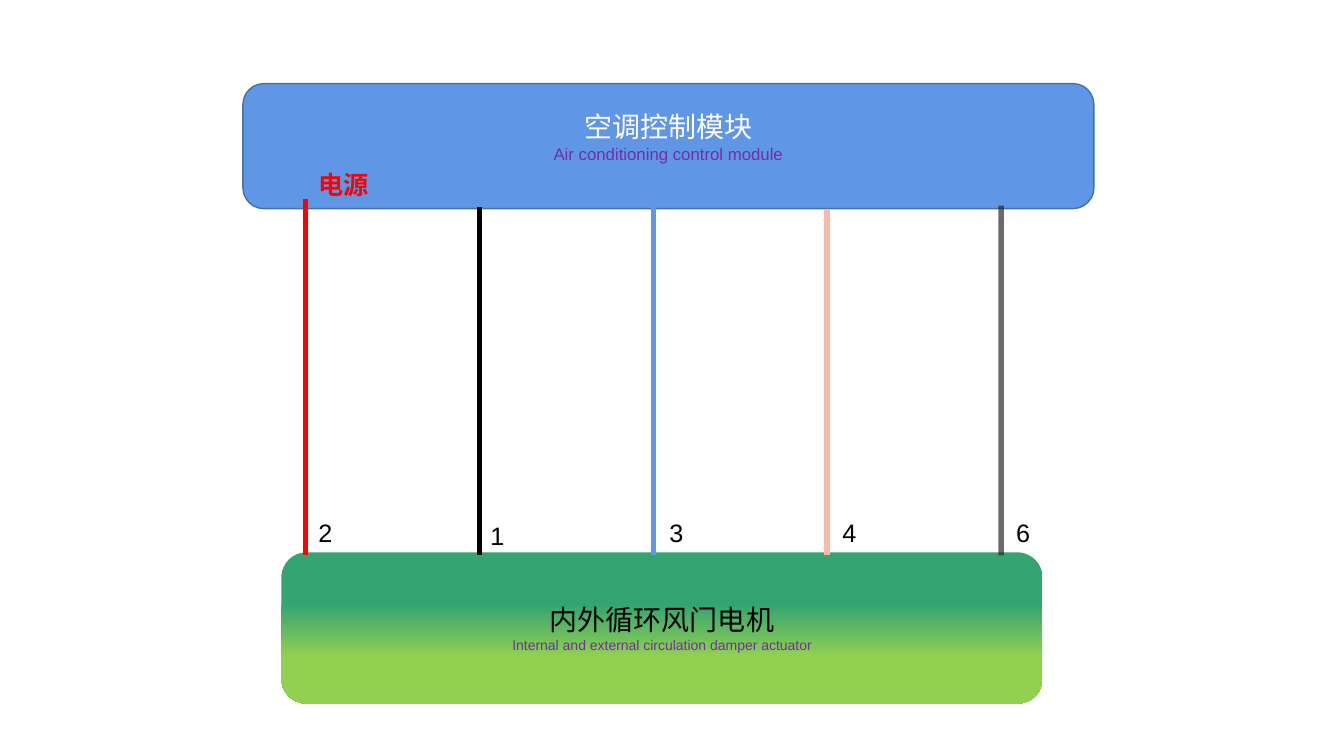
import pptx
import pptx.util
import pptx.dml.color
import pptx.enum.shapes
import pptx.enum.text
import pptx.oxml
import pptx.oxml.ns

Inches, Pt = pptx.util.Inches, pptx.util.Pt
ALIGN = pptx.enum.text.PP_ALIGN
ANCHOR = pptx.enum.text.MSO_ANCHOR

COLORS = {
    "blue": "6096E6", "edge": "476FAA", "white": "FFFFFF", "black": "000000",
    "purple": "7030A0", "green": "34A471", "lime": "92D050",
    "red": "FF0000", "pink": "F7B8A9", "gray": "262626",
}
LEFT, PITCH = 3.03, 1.725  # first wire and the gap between wires
FOOT = 5.51                # lower end of every wire

# pin, color, top of wire, label shift, label top, opacity in percent
WIRES = [
    ("2", "red", 1.97, 0.03, 5.08, 100),
    ("1", "black", 2.05, 0.01, 5.11, 100),
    ("3", "blue", 2.04, 0.06, 5.08, 100),
    ("4", "pink", 2.07, 0.05, 5.08, 100),
    ("6", "gray", 2.04, 0.05, 5.08, 67),
]


def rgb(name):
    return pptx.dml.color.RGBColor.from_string(COLORS[name])


def write(para, text, size=18, color="black", bold=None, align=None):
    para.alignment = align
    run = para.add_run()
    run.text = text
    font = run.font
    font.name, font.size, font.bold = "Arial", Pt(size), bold
    font.color.rgb = rgb(color)


def label(slide, text, left, top, width=0.65, wrap=True, **style):
    box = slide.shapes.add_textbox(*map(Inches, (left, top, width, 0.4)))
    frame = box.text_frame
    frame.word_wrap = wrap
    frame.auto_size = pptx.enum.text.MSO_AUTO_SIZE.SHAPE_TO_FIT_TEXT
    write(frame.paragraphs[0], text, **style)


def block(slide, area, title, note):
    """Add a rounded box with a title and a note, each (text, size, color)."""
    kind = pptx.enum.shapes.MSO_SHAPE.ROUNDED_RECTANGLE
    shape = slide.shapes.add_shape(kind, *map(Inches, area))
    shape.shadow.inherit = False
    frame = shape.text_frame
    frame.word_wrap = True
    frame.vertical_anchor = ANCHOR.MIDDLE
    write(frame.paragraphs[0], *title, align=ALIGN.CENTER)
    write(frame.add_paragraph(), *note, align=ALIGN.CENTER)
    return shape


def blend(shape, stops):
    """Fill from top to bottom with (position, color) stops."""
    shape.fill.gradient()
    shape.fill.gradient_angle = 270
    for stop, (place, color) in zip(shape.fill.gradient_stops, stops):
        stop.position = place
        stop.color.rgb = rgb(color)


def wire(slide, x, top, color, alpha):
    ends = map(Inches, (x, top, x, FOOT))
    link = slide.shapes.add_connector(
        pptx.enum.shapes.MSO_CONNECTOR.STRAIGHT, *ends)
    link.line.width = Pt(4)
    link.line.color.rgb = rgb(color)
    props = link._element.spPr
    if alpha < 100:
        tint = props.find(".//" + pptx.oxml.ns.qn("a:srgbClr"))
        tint.append(pptx.oxml.parse_xml(
            f'<a:alpha {pptx.oxml.ns.nsdecls("a")} val="{alpha * 1000}"/>'))
    props.append(pptx.oxml.parse_xml(
        f'<a:effectLst {pptx.oxml.ns.nsdecls("a")}/>'))


def main():
    deck = pptx.Presentation()
    deck.slide_width, deck.slide_height = Inches(13.33), Inches(7.5)
    slide = deck.slides.add_slide(deck.slide_layouts[6])

    module = block(slide, (2.41, 0.83, 8.44, 1.24),
                   ("空调控制模块", 20, "white"),
                   ("Air conditioning control module", 12, "purple"))
    module.fill.solid()
    module.fill.fore_color.rgb = rgb("blue")
    module.line.color.rgb = rgb("edge")
    module.line.width = Pt(1)
    module.text_frame.margin_bottom = Inches(0.24)

    motor = block(slide, (2.79, 5.48, 7.55, 1.5),
                  ("内外循环风门电机", 20, "black"),
                  ("Internal and external circulation damper actuator",
                   10, "purple"))
    blend(motor, [(0.34, "green"), (0.69, "lime")])
    motor.line.fill.background()

    for col, (pin, color, top, shift, row, alpha) in enumerate(WIRES):
        x = LEFT + col * PITCH
        wire(slide, x, top, color, alpha)
        label(slide, pin, x + shift, row)
    label(slide, "电源", LEFT + 0.03, 1.63, width=0.7, wrap=False,
          color="red", bold=True)

    deck.save("out.pptx")


if __name__ == "__main__":
    main()
